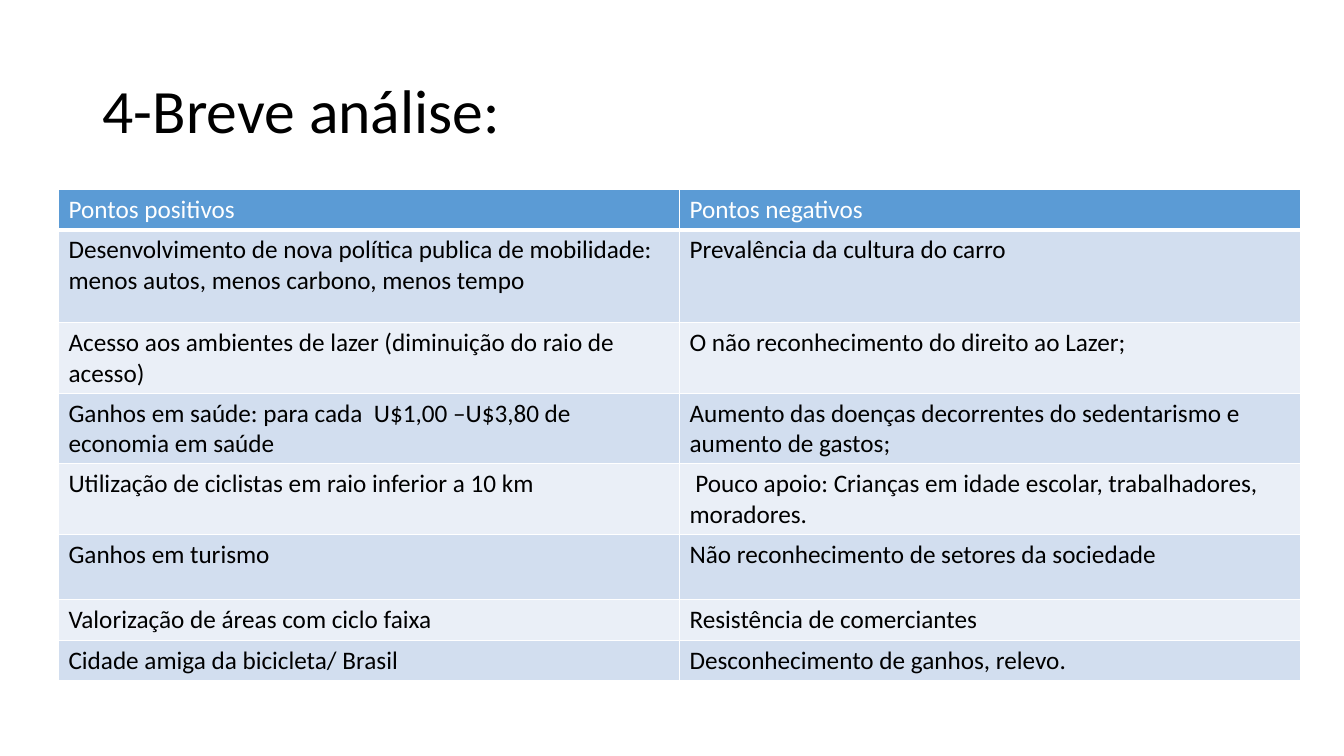
from lxml import etree
from pptx import Presentation
from pptx.dml.color import RGBColor
from pptx.enum import text
from pptx.oxml import ns
from pptx.util import Inches, Pt

BLACK = RGBColor(0x00, 0x00, 0x00)
WHITE = RGBColor(0xFF, 0xFF, 0xFF)
HEADER_BLUE = RGBColor(0x5B, 0x9B, 0xD5)
BANDS = [RGBColor(0xEA, 0xEF, 0xF7), RGBColor(0xD2, 0xDE, 0xEF)]

POINTS = [
    ("Pontos positivos", "Pontos negativos", 0.37),
    ("Desenvolvimento de nova política publica de mobilidade: menos autos, menos carbono, menos tempo",
     "Prevalência da cultura do carro", 0.92),
    ("Acesso aos ambientes de lazer (diminuição do raio de acesso)",
     "O não reconhecimento do direito ao Lazer;", 0.65),
    ("Ganhos em saúde: para cada  U$1,00 –U$3,80 de economia em saúde",
     "Aumento das doenças decorrentes do sedentarismo e aumento de gastos;", 0.65),
    ("Utilização de ciclistas em raio inferior a 10 km",
     " Pouco apoio: Crianças em idade escolar, trabalhadores, moradores.", 0.65),
    ("Ganhos em turismo", "Não reconhecimento de setores da sociedade", 0.65),
    ("Valorização de áreas com ciclo faixa", "Resistência de comerciantes", 0.37),
    ("Cidade amiga da bicicleta/ Brasil", "Desconhecimento de ganhos, relevo.", 0.37),
]


def style_text(para, size, color):
    para.font.name = "Calibri"
    para.font.size = Pt(size)
    para.font.bold = False
    para.font.color.rgb = color


def add_border(cell, side, width):
    line = etree.SubElement(cell._tc.get_or_add_tcPr(), ns.qn(f"a:{side}"), w=str(Pt(width)))
    fill = etree.SubElement(line, ns.qn("a:solidFill"))
    etree.SubElement(fill, ns.qn("a:srgbClr"), val=str(WHITE))


deck = Presentation()
deck.slide_width = Inches(13.33)
deck.slide_height = Inches(7.5)
page = deck.slides.add_slide(deck.slide_layouts[6])

title = page.shapes.add_textbox(Inches(0.92), Inches(0.4), Inches(11.5), Inches(1.45))
title.text_frame.word_wrap = True
title.text_frame.vertical_anchor = text.MSO_ANCHOR.MIDDLE
para = title.text_frame.paragraphs[0]
para.text = "4-Breve análise:"
para.line_spacing = 0.9
style_text(para, 44, BLACK)

table = page.shapes.add_table(
    len(POINTS), 2, Inches(0.58), Inches(1.88), Inches(12.32),
    Inches(sum(height for _, _, height in POINTS))).table

for index, (positive, negative, height) in enumerate(POINTS):
    table.rows[index].height = Inches(height)
    header = index == 0
    for column, words in enumerate((positive, negative)):
        cell = table.cell(index, column)
        for side in ("lnL", "lnR", "lnT", "lnB"):
            under_header = (index, side) in ((0, "lnB"), (1, "lnT"))
            add_border(cell, side, 3 if under_header else 1)
        cell.fill.solid()
        cell.fill.fore_color.rgb = HEADER_BLUE if header else BANDS[index % 2]
        cell.text = words
        style_text(cell.text_frame.paragraphs[0], 18, WHITE if header else BLACK)

deck.save("out.pptx")
